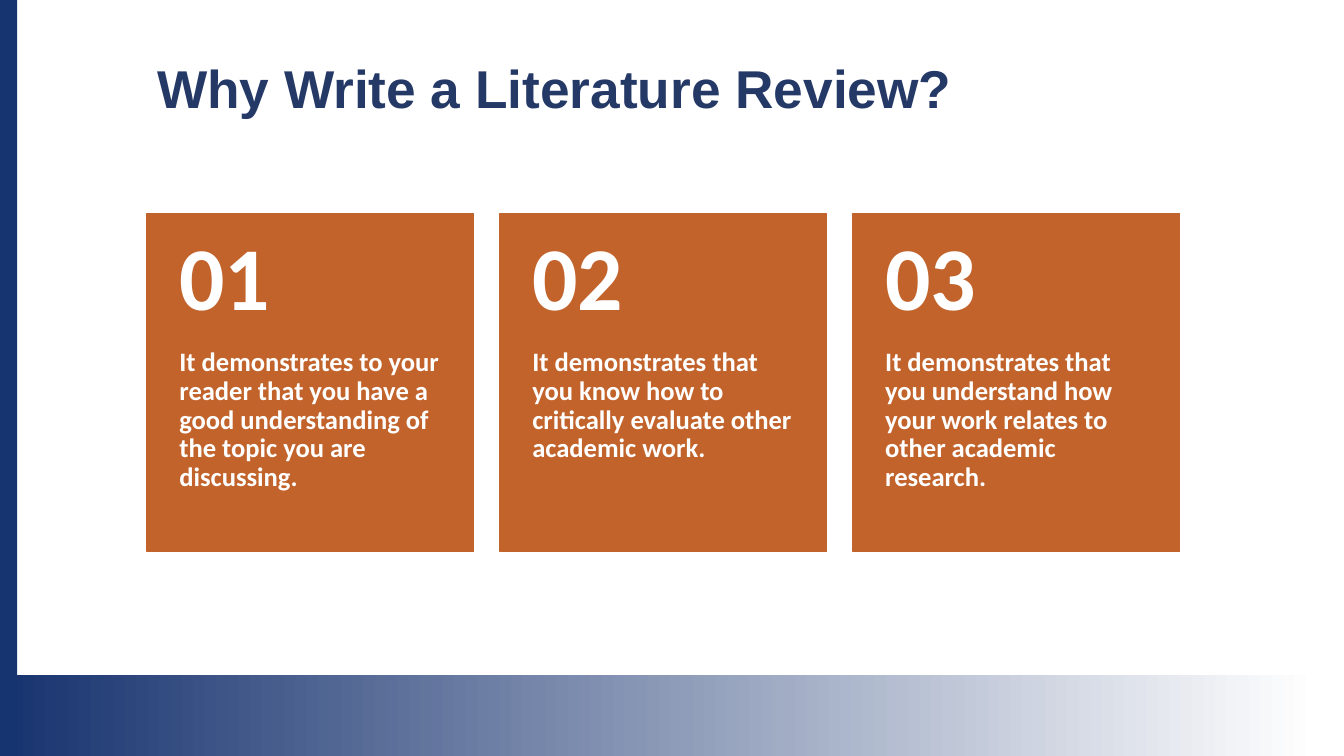
from dataclasses import dataclass

import pptx
import pptx.dml.color
import pptx.enum.shapes
import pptx.enum.text
import pptx.util
from pptx.util import Inches

COLOURS = {
    "band": "17336F",
    "edge": "16346F",
    "title": "253967",
    "card": "C2632C",
    "white": "FFFFFF",
}
ANCHOR = pptx.enum.text.MSO_ANCHOR

CARD_LEFT, CARD_TOP, CARD_STEP = 1.46, 2.12, 3.5
CARD_WIDTH, CARD_HEIGHT, NUMBER_HEIGHT = 3.24, 3.35, 1.34


@dataclass(frozen=True)
class Box:
    left: float
    top: float
    width: float
    height: float

    def lengths(self) -> list[int]:
        return [Inches(value) for value in (self.left, self.top, self.width, self.height)]


@dataclass(frozen=True)
class TextStyle:
    size: float
    font: str
    colour: str
    anchor: ANCHOR = ANCHOR.TOP
    insets: tuple[float, float, float, float] = (0.1, 0.05, 0.1, 0.05)


TITLE = TextStyle(38, "Arial", "title")
NUMBER = TextStyle(64, "Calibri", "white", ANCHOR.MIDDLE, (0.32, 0.18, 0.32, 0.18))
REASON = TextStyle(19, "Calibri", "white", insets=(0.32, 0, 0.32, 0.36))

REASONS = [
    "It demonstrates to your reader that you have a good understanding of "
    "the topic you are discussing.",
    "It demonstrates that you know how to critically evaluate other academic work.",
    "It demonstrates that you understand how your work relates to other "
    "academic research.",
]


def rgb(name: str) -> pptx.dml.color.RGBColor:
    return pptx.dml.color.RGBColor.from_string(COLOURS[name])


def add_rectangle(slide, box: Box, colour: str, outlined: bool = False):
    shape = slide.shapes.add_shape(
        pptx.enum.shapes.MSO_SHAPE.RECTANGLE, *box.lengths()
    )
    shape.shadow.inherit = False
    shape.fill.solid()
    shape.fill.fore_color.rgb = rgb(colour)
    if outlined:
        shape.line.color.rgb = rgb(colour)
        shape.line.width = pptx.util.Pt(1)
    else:
        shape.line.fill.background()
    return shape


def fade_to_white(shape, colour: str) -> None:
    """Fill the shape with a left-to-right gradient from colour to white."""
    shape.fill.gradient()
    shape.fill.gradient_angle = 0
    stops = ((0, colour), (0.98, "white"))
    for stop, (position, name) in zip(shape.fill.gradient_stops, stops):
        stop.position = position
        stop.color.rgb = rgb(name)


def add_text(slide, box: Box, text: str, style: TextStyle) -> None:
    frame = slide.shapes.add_textbox(*box.lengths()).text_frame
    left, top, right, bottom = map(Inches, style.insets)
    frame_format = {
        "word_wrap": True,
        "vertical_anchor": style.anchor,
        "margin_left": left,
        "margin_top": top,
        "margin_right": right,
        "margin_bottom": bottom,
    }
    for name, value in frame_format.items():
        setattr(frame, name, value)

    paragraph = frame.paragraphs[0]
    paragraph.line_spacing = 0.9
    run = paragraph.add_run()
    run.text = text
    font_format = {"name": style.font, "size": pptx.util.Pt(style.size), "bold": True}
    for name, value in font_format.items():
        setattr(run.font, name, value)
    run.font.color.rgb = rgb(style.colour)


def add_card(slide, index: int, reason: str) -> None:
    left = CARD_LEFT + index * CARD_STEP
    reason_box = Box(
        left, CARD_TOP + NUMBER_HEIGHT, CARD_WIDTH, CARD_HEIGHT - NUMBER_HEIGHT
    )
    number_box = Box(left, CARD_TOP, CARD_WIDTH, NUMBER_HEIGHT)
    add_rectangle(
        slide, Box(left, CARD_TOP, CARD_WIDTH, CARD_HEIGHT), "card", outlined=True
    )
    add_text(slide, reason_box, reason, REASON)
    add_text(slide, number_box, f"{index + 1:02}", NUMBER)


def main() -> None:
    presentation = pptx.Presentation()
    presentation.slide_width = Inches(13.33)
    presentation.slide_height = Inches(7.5)
    slide = presentation.slides.add_slide(presentation.slide_layouts[6])

    band = add_rectangle(slide, Box(0, 6.7, 13.33, 0.8), "band")
    fade_to_white(band, "band")
    add_rectangle(slide, Box(0, 0, 0.17, 7.5), "edge")
    add_text(slide, Box(1.46, 0.57, 8.16, 0.96), "Why Write a Literature Review?", TITLE)
    for index, reason in enumerate(REASONS):
        add_card(slide, index, reason)

    presentation.save("out.pptx")


if __name__ == "__main__":
    main()
